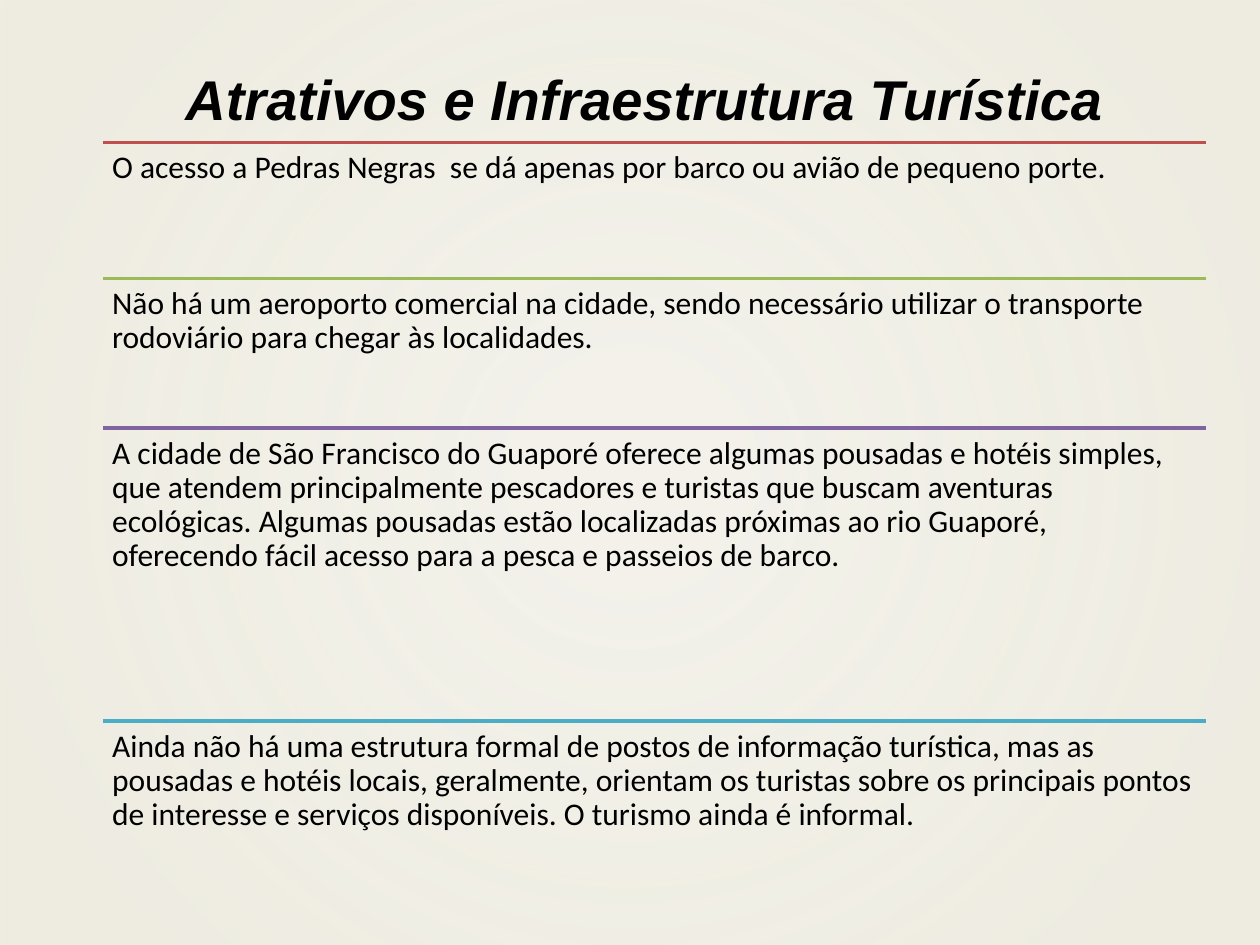
from dataclasses import dataclass

from pptx import Presentation
from pptx.dml.color import RGBColor
from pptx.enum.shapes import MSO_CONNECTOR as Connector, MSO_SHAPE as Shape
from pptx.enum.text import MSO_ANCHOR as Anchor, PP_ALIGN as Align
from pptx.oxml import parse_xml
from pptx.oxml.ns import nsdecls
from pptx.util import Inches, Pt

TITLE = "Atrativos e Infraestrutura Turística"

# Rule colour, share of the slide height where the section starts, text
SECTIONS = [
    ("C0504D", 0.151,
     "O acesso a Pedras Negras  se dá apenas por barco ou avião de pequeno porte."),
    ("9BBB59", 0.295,
     "Não há um aeroporto comercial na cidade, sendo necessário utilizar o "
     "transporte rodoviário para chegar às localidades."),
    ("8064A2", 0.453,
     "A cidade de São Francisco do Guaporé oferece algumas pousadas e hotéis "
     "simples, que atendem principalmente pescadores e turistas que buscam "
     "aventuras ecológicas. Algumas pousadas estão localizadas próximas ao rio "
     "Guaporé, oferecendo fácil acesso para a pesca e passeios de barco."),
    ("4BACC6", 0.763,
     "Ainda não há uma estrutura formal de postos de informação turística, mas "
     "as pousadas e hotéis locais, geralmente, orientam os turistas sobre os "
     "principais pontos de interesse e serviços disponíveis. O turismo ainda é "
     "informal."),
]
SECTIONS_END = 0.91


@dataclass(frozen=True)
class Theme:
    ink: str = "000000"
    paper: str = "EEECE1"
    paper_stops: tuple = ((10, 68), (85, 97))  # position %, opacity %
    title_font: str = "Arial"
    body_font: str = "Calibri"
    title_size: int = 32
    body_size: int = 18
    rule_width: int = 2
    line_spacing: float = 0.9
    inset: float = 0.07


THEME = Theme()
WIDTH, HEIGHT = 10, 7.5
LEFT, RIGHT = 0.82, 9.57


def add_background(page):
    """Cover the page with a translucent radial gradient."""
    backdrop = page.shapes.add_shape(Shape.RECTANGLE, 0, 0, Inches(WIDTH), Inches(HEIGHT))
    backdrop.shadow.inherit = False
    backdrop.line.fill.background()
    backdrop.fill.background()
    stops = "".join(
        f'<a:gs pos="{position * 1000}"><a:srgbClr val="{THEME.paper}">'
        f'<a:alpha val="{opacity * 1000}"/></a:srgbClr></a:gs>'
        for position, opacity in THEME.paper_stops)
    gradient = parse_xml(
        f'<a:gradFill {nsdecls("a")} rotWithShape="1"><a:gsLst>{stops}</a:gsLst>'
        '<a:path path="circle"><a:fillToRect l="50000" t="50000" r="50000" b="50000"/>'
        '</a:path></a:gradFill>')
    properties = backdrop.element.spPr
    properties.replace(properties.find("{*}noFill"), gradient)


def add_text(page, text, left, top, width, height, font, size):
    box = page.shapes.add_textbox(*map(Inches, (left, top, width, height)))
    frame = box.text_frame
    frame.word_wrap = True
    para = frame.paragraphs[0]
    span = para.add_run()
    span.text = text
    span.font.name = font
    span.font.size = Pt(size)
    span.font.color.rgb = RGBColor.from_string(THEME.ink)
    return frame, para, span


def add_title(page):
    frame, para, span = add_text(page, TITLE, 0.33, 0.6, 9.57, 0.35,
                                 THEME.title_font, THEME.title_size)
    frame.vertical_anchor = Anchor.MIDDLE
    para.alignment = Align.CENTER
    span.font.bold = span.font.italic = True


def add_rule(page, top, color):
    rule = page.shapes.add_connector(Connector.STRAIGHT, Inches(LEFT), Inches(top),
                                     Inches(RIGHT), Inches(top))
    rule.line.color.rgb = RGBColor.from_string(color)
    rule.line.width = Pt(THEME.rule_width)
    rule.element.spPr.append(parse_xml(f'<a:effectLst {nsdecls("a")}/>'))


def add_section(page, color, top, bottom, text):
    add_rule(page, top, color)
    frame, para, _ = add_text(page, text, LEFT, top, RIGHT - LEFT, bottom - top,
                              THEME.body_font, THEME.body_size)
    frame.margin_left = frame.margin_right = Inches(THEME.inset)
    frame.margin_top = frame.margin_bottom = Inches(THEME.inset)
    para.line_spacing = THEME.line_spacing


def main():
    deck = Presentation()
    deck.slide_width, deck.slide_height = Inches(WIDTH), Inches(HEIGHT)
    page = deck.slides.add_slide(deck.slide_layouts[6])
    add_background(page)
    add_title(page)
    ends = [start for _, start, _ in SECTIONS[1:]] + [SECTIONS_END]
    for (color, start, text), end in zip(SECTIONS, ends):
        add_section(page, color, start * HEIGHT, end * HEIGHT, text)
    deck.save("out.pptx")


if __name__ == "__main__":
    main()
